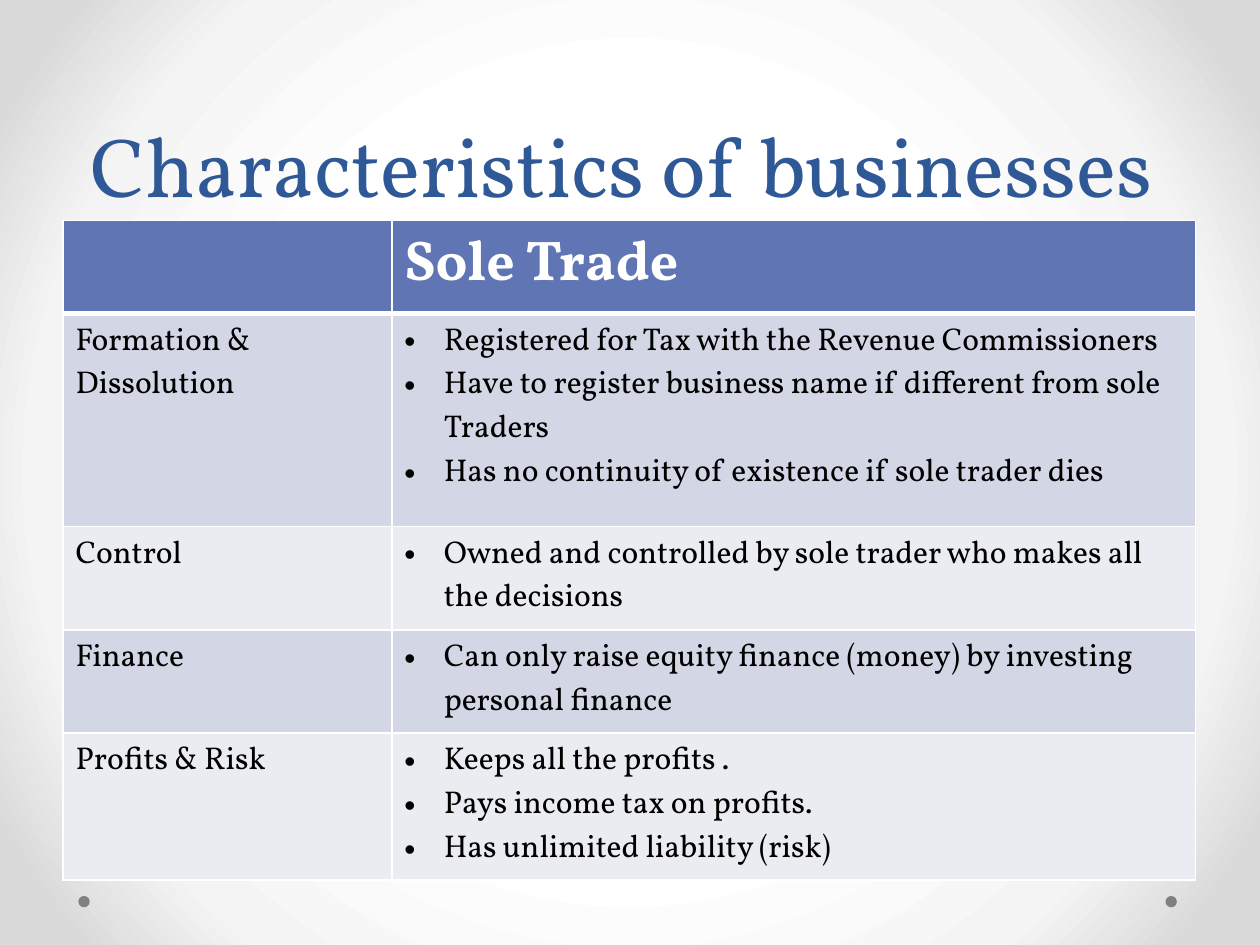
from lxml import etree
from pptx import Presentation
from pptx.dml.color import RGBColor
from pptx.enum.shapes import MSO_SHAPE
from pptx.enum.text import MSO_ANCHOR, PP_ALIGN
from pptx.oxml.ns import qn
from pptx.util import Pt

OVAL = MSO_SHAPE.OVAL
BOTTOM = MSO_ANCHOR.BOTTOM
CENTER = PP_ALIGN.CENTER

FONT = "Vollkorn"
WHITE = RGBColor(0xFF, 0xFF, 0xFF)
BLACK = RGBColor(0x00, 0x00, 0x00)
GREY = RGBColor(0x80, 0x80, 0x80)
TITLE_BLUE = RGBColor(0x2F, 0x58, 0x97)
HEADER_BLUE = RGBColor(0x60, 0x76, 0xB4)
BANDS = (RGBColor(0xD2, 0xD6, 0xE5), RGBColor(0xEA, 0xEC, 0xF2))
GLOW = ((50, WHITE), (76, RGBColor(0xF4, 0xF4, 0xF4)), (92, RGBColor(0xDA, 0xDA, 0xDA)))

COLUMN_WIDTHS = (187.9, 459.4)
HEADER_HEIGHT = 53.3
INDENT = 22.5

# Topic, row height, points
TOPICS = (
    ("Formation & Dissolution", 121.7, (
        "Registered for Tax with the Revenue Commissioners",
        "Have to register business name if different from sole Traders",
        "Has no continuity of existence if sole trader dies")),
    ("Control", 59, (
        "Owned and controlled by sole trader who makes all the decisions",)),
    ("Finance", 59, (
        "Can only raise equity finance (money) by investing personal finance",)),
    ("Profits & Risk", 84, (
        "Keeps all the profits .",
        "Pays income tax on profits.",
        "Has unlimited liability (risk)")),
)


def add_child(parent, tag, **attributes):
    return etree.SubElement(parent, qn(tag), attributes)


def set_background(slide):
    """Radial glow, from white in the middle to grey at the corners."""
    slide.background.fill.gradient()
    gradient = slide.element.find(".//" + qn("a:gradFill"))
    for child in list(gradient):
        gradient.remove(child)
    stops = add_child(gradient, "a:gsLst")
    for percent, color in GLOW:
        stop = add_child(stops, "a:gs", pos=str(percent * 1000))
        add_child(stop, "a:srgbClr", val=str(color))
    circle = add_child(gradient, "a:path", path="circle")
    add_child(circle, "a:fillToRect", l="50000", t="50000", r="50000", b="50000")


def add_dot(slide, left):
    dot = slide.shapes.add_shape(OVAL, Pt(left), Pt(512), Pt(6.5), Pt(6.5))
    dot.shadow.inherit = False
    dot.fill.solid()
    dot.fill.fore_color.rgb = GREY
    dot.line.fill.background()


def add_run(paragraph, text, size, color, bold=False):
    run = paragraph.add_run()
    run.text = text
    run.font.name = FONT
    run.font.size = Pt(size)
    run.font.bold = bold
    run.font.color.rgb = color


def add_title(slide, text):
    frame = slide.shapes.add_textbox(Pt(36), Pt(0), Pt(648), Pt(126)).text_frame
    frame.word_wrap = True
    frame.vertical_anchor = BOTTOM
    paragraph = frame.paragraphs[0]
    paragraph.alignment = CENTER
    paragraph.line_spacing = Pt(58)
    add_run(paragraph, text, 48, TITLE_BLUE)


def style_cell(cell, fill, top=1, bottom=1):
    properties = cell._tc.get_or_add_tcPr()
    for side, width in (("L", 1), ("R", 1), ("T", top), ("B", bottom)):
        border = add_child(properties, "a:ln" + side, w=str(Pt(width)))
        solid = add_child(border, "a:solidFill")
        add_child(solid, "a:srgbClr", val=str(WHITE))
    cell.fill.solid()
    cell.fill.fore_color.rgb = fill


def add_bullets(cell, points):
    frame = cell.text_frame
    for index, point in enumerate(points):
        paragraph = frame.add_paragraph() if index else frame.paragraphs[0]
        properties = paragraph._p.get_or_add_pPr()
        properties.set("marL", str(Pt(INDENT)))
        properties.set("indent", str(-Pt(INDENT)))
        add_child(properties, "a:buFont", typeface="Arial")
        add_child(properties, "a:buChar", char="•")
        add_run(paragraph, point, 18, BLACK)


def add_characteristics_table(slide):
    heights = [HEADER_HEIGHT] + [height for _, height, _ in TOPICS]
    table = slide.shapes.add_table(
        len(heights), len(COLUMN_WIDTHS), Pt(36), Pt(126),
        Pt(sum(COLUMN_WIDTHS)), Pt(sum(heights))).table
    for column, width in zip(table.columns, COLUMN_WIDTHS):
        column.width = Pt(width)
    for row, height in zip(table.rows, heights):
        row.height = Pt(height)

    # Header row
    for cell in table.rows[0].cells:
        style_cell(cell, HEADER_BLUE, bottom=3)
    add_run(table.cell(0, 1).text_frame.paragraphs[0], "Sole Trade", 32, WHITE, bold=True)

    # One banded row for each topic
    for index, (topic, _, points) in enumerate(TOPICS):
        topic_cell, points_cell = table.rows[index + 1].cells
        for cell in (topic_cell, points_cell):
            style_cell(cell, BANDS[index % 2], top=1 if index else 3)
        add_run(topic_cell.text_frame.paragraphs[0], topic, 18, BLACK)
        add_bullets(points_cell, points)


def main():
    presentation = Presentation()
    presentation.slide_width = Pt(720)
    presentation.slide_height = Pt(540)
    slide = presentation.slides.add_slide(presentation.slide_layouts[6])
    set_background(slide)
    for left in (666, 44.8):
        add_dot(slide, left)
    add_title(slide, "Characteristics of businesses ")
    add_characteristics_table(slide)
    presentation.save("out.pptx")


if __name__ == "__main__":
    main()
